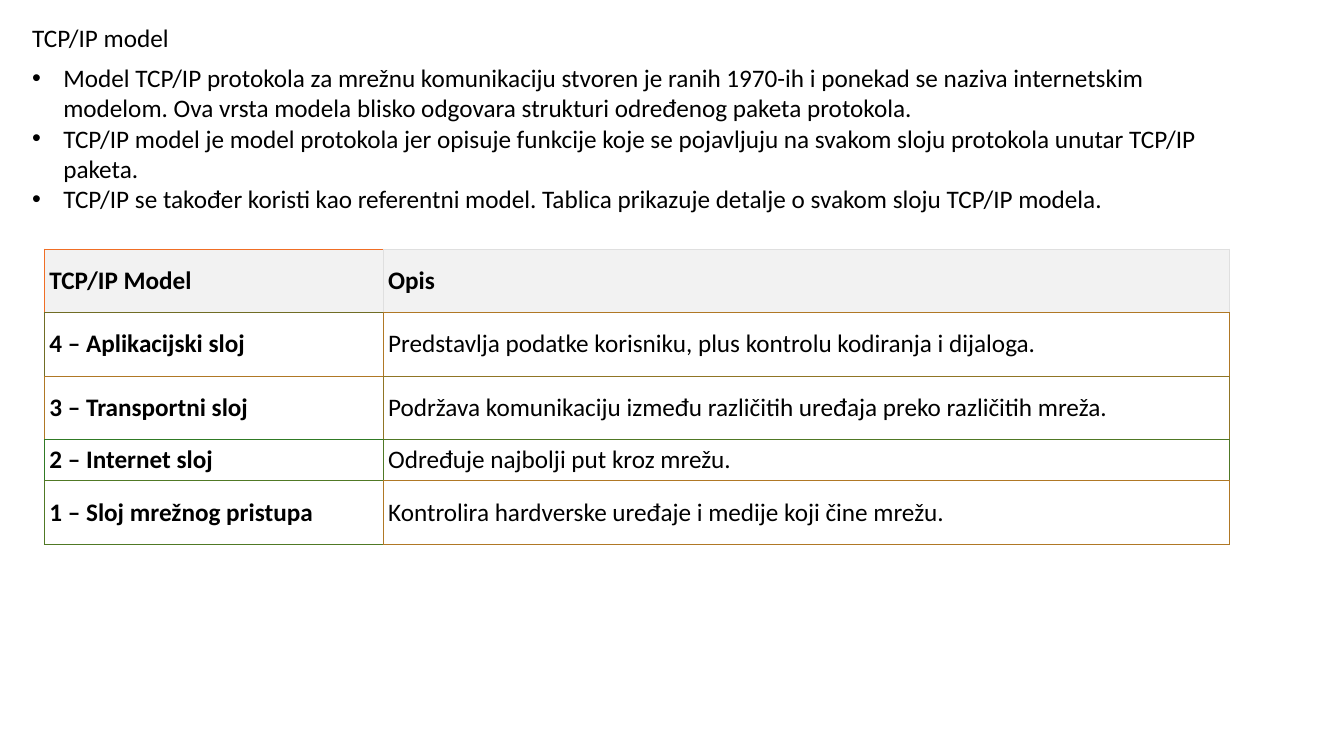
import pptx
import pptx.dml.color
import pptx.enum.text
import pptx.util
from lxml import etree
from pptx.util import Inches

COLORS = {
    "text": "000000", "header": "F2F2F2", "body": "FFFFFF",
    "orange": "F06E25", "silver": "DFDFDF", "brown": "706D25", "amber": "B07825",
    "olive": "907525", "green": "307A25", "moss": "507825", "fern": "507925",
}
FONT_FORMAT = {"name": "Calibri", "size": pptx.util.Pt(18)}
FRAME_FORMAT = {"auto_size": pptx.enum.text.MSO_AUTO_SIZE.SHAPE_TO_FIT_TEXT}
CELL_FORMAT = {"vertical_anchor": pptx.enum.text.MSO_ANCHOR.MIDDLE}
for side in ("left", "right", "top", "bottom"):
    CELL_FORMAT["margin_" + side] = Inches(0.05)


def style_text(paragraph, bold=False):
    for key, value in FONT_FORMAT.items():
        setattr(paragraph.font, key, value)
    paragraph.font.bold = bold
    paragraph.font.color.rgb = pptx.dml.color.RGBColor.from_string(COLORS["text"])


def add_child(parent, tag, **attributes):
    """Append a DrawingML element to parent and return it."""
    return etree.SubElement(parent, pptx.oxml.ns.qn(tag), attributes)


presentation = pptx.Presentation()
presentation.slide_width = Inches(13.33)
presentation.slide_height = Inches(7.5)
slide = presentation.slides.add_slide(presentation.slide_layouts[6])

# Heading
heading = slide.shapes.add_textbox(Inches(0.22), Inches(0.17), Inches(1.57), Inches(0.4)).text_frame
heading.word_wrap = False
heading.text = "TCP/IP model"
style_text(heading.paragraphs[0])

# Layer table: each cell has a label and the tone of its left and top borders
layers = [
    [("TCP/IP Model", "orange"), ("Opis", "silver")],
    [("4 – Aplikacijski sloj", "brown"),
     ("Predstavlja podatke korisniku, plus kontrolu kodiranja i dijaloga.", "amber")],
    [("3 – Transportni sloj", "amber"),
     ("Podržava komunikaciju između različitih uređaja preko različitih mreža.", "olive")],
    [("2 – Internet sloj", "green"), ("Određuje najbolji put kroz mrežu.", "moss")],
    [("1 – Sloj mrežnog pristupa", "fern"),
     ("Kontrolira hardverske uređaje i medije koji čine mrežu.", "amber")],
]
layer_table = slide.shapes.add_table(
    len(layers), 2, Inches(0.44), Inches(2.47), Inches(11.75), Inches(2.93)).table
for column, width in zip(layer_table.columns, (3.36, 8.39)):
    column.width = Inches(width)
for row, height in zip(layer_table.rows, (0.63, 0.63, 0.63, 0.41, 0.63)):
    row.height = Inches(height)

for r, layer in enumerate(layers):
    below = layers[min(r + 1, len(layers) - 1)]
    for c, (label, tone) in enumerate(layer):
        cell = layer_table.cell(r, c)
        cell.text = label
        style_text(cell.text_frame.paragraphs[0], bold=r == 0 or c == 0)
        for key, value in CELL_FORMAT.items():
            setattr(cell, key, value)
        # The right and bottom borders take the tone of the neighbouring cell
        borders = {"a:lnL": tone, "a:lnR": layer[1][1], "a:lnT": tone, "a:lnB": below[c][1]}
        for tag, border_tone in borders.items():
            line = add_child(cell._tc.get_or_add_tcPr(), tag, w=str(pptx.util.Pt(0.75)))
            add_child(add_child(line, "a:solidFill"), "a:srgbClr", val=COLORS[border_tone])
        cell.fill.solid()
        cell.fill.fore_color.rgb = pptx.dml.color.RGBColor.from_string(
            COLORS["header" if r == 0 else "body"])

# Bulleted introduction
points = [
    "Model TCP/IP protokola za mrežnu komunikaciju stvoren je ranih 1970-ih i ponekad se naziva "
    "internetskim modelom. Ova vrsta modela blisko odgovara strukturi određenog paketa protokola.",
    "TCP/IP model je model protokola jer opisuje funkcije koje se pojavljuju na svakom sloju "
    "protokola unutar TCP/IP paketa.",
    "TCP/IP se također koristi kao referentni model. Tablica prikazuje detalje o svakom sloju "
    "TCP/IP modela.",
]
introduction = slide.shapes.add_textbox(
    Inches(0.22), Inches(0.57), Inches(12.24), Inches(1.62)).text_frame
introduction.word_wrap = True
introduction.text = "\n".join(points)
for point in introduction.paragraphs:
    properties = point._p.get_or_add_pPr()
    properties.set("marL", str(Inches(0.31)))
    properties.set("indent", str(Inches(-0.31)))
    add_child(properties, "a:buFont", typeface="Arial")
    add_child(properties, "a:buChar", char="•")
    style_text(point)

for frame in (heading, introduction):
    for key, value in FRAME_FORMAT.items():
        setattr(frame, key, value)

presentation.save("out.pptx")
